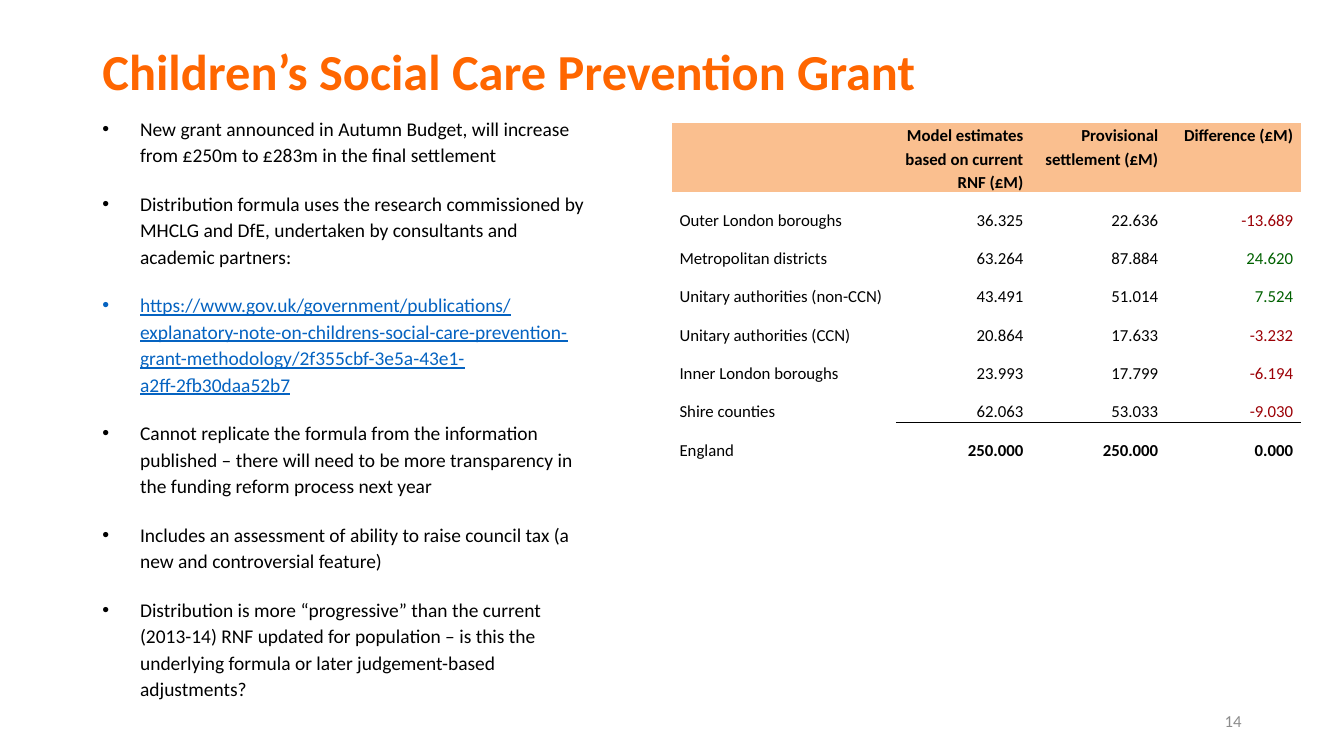
from dataclasses import dataclass

import pptx
import pptx.dml.color
import pptx.enum.text
import pptx.oxml
import pptx.oxml.ns
import pptx.util
from lxml import etree

TITLE = "Children’s Social Care Prevention Grant"
LINK = (
    "https://www.gov.uk/government/publications/"
    "explanatory-note-on-childrens-social-care-prevention-grant-methodology/"
    "2f355cbf-3e5a-43e1-a2ff-2fb30daa52b7"
)
BULLETS = [
    "New grant announced in Autumn Budget, will increase from £250m to £283m in the final settlement",
    "Distribution formula uses the research commissioned by MHCLG and DfE, undertaken by consultants "
    "and academic partners:",
    LINK,
    "Cannot replicate the formula from the information published – there will need to be more "
    "transparency in the funding reform process next year",
    "Includes an assessment of ability to raise council tax (a new and controversial feature)",
    "Distribution is more “progressive” than the current (2013-14) RNF updated for population – is this "
    "the underlying formula or later judgement-based adjustments?",
]
HEADINGS = [
    "",
    "Model estimates based on current RNF (£M)",
    "Provisional settlement (£M)",
    "Difference (£M)",
]
AUTHORITIES = [
    ("Outer London boroughs", 36.325, 22.636, -13.689),
    ("Metropolitan districts", 63.264, 87.884, 24.620),
    ("Unitary authorities (non-CCN)", 43.491, 51.014, 7.524),
    ("Unitary authorities (CCN)", 20.864, 17.633, -3.232),
    ("Inner London boroughs", 23.993, 17.799, -6.194),
    ("Shire counties", 62.063, 53.033, -9.030),
]
TOTAL = ("England", 250.0, 250.0, 0.0)
SLIDE_NUMBER = "14"

# Left, top, width, height in points
SLIDE_SIZE = (960, 540)
TITLE_BOX = (66, 29.5, 863, 47.5)
BODY_BOX = (66, 77.8, 365, 432.7)
NUMBER_BOX = (678, 500.5, 216, 29)
TABLE_LEFT, TABLE_TOP = 480, 87.8
COLUMN_WIDTHS = (160, 96.4, 96.4, 96.4)
HEADER_HEIGHT, ROW_HEIGHT = 49.2, 27.4
CELL_MARGIN = 5.4
BULLET_INDENT = 27

NO_TABLE_STYLE = "{2D5ABB26-0587-4C30-8999-92F81FD0307C}"
Align = pptx.enum.text.PP_ALIGN
Anchor = pptx.enum.text.MSO_ANCHOR
Pt = pptx.util.Pt


@dataclass(frozen=True)
class Theme:
    font: str = "Calibri"
    title_size: float = 36
    body_size: float = 13.9
    small_size: float = 12
    title: str = "FF6600"
    text: str = "000000"
    link: str = "0563C1"
    muted: str = "8C8C8C"
    header: str = "FABF8F"
    gain: str = "006100"
    loss: str = "9C0006"


THEME = Theme()


def rgb(value):
    return pptx.dml.color.RGBColor.from_string(value)


def format_paragraph(paragraph, size, color, bold=False, align=Align.LEFT, spacing=1.0):
    paragraph.alignment = align
    paragraph.line_spacing = spacing
    for run in paragraph.runs:
        run.font.name = THEME.font
        run.font.size = Pt(size)
        run.font.bold = bold
        run.font.color.rgb = rgb(color)


def place(shape, box):
    shape.left, shape.top, shape.width, shape.height = map(Pt, box)


def add_title(slide):
    title = slide.shapes.title
    place(title, TITLE_BOX)
    frame = title.text_frame
    frame.text = TITLE
    frame.auto_size = pptx.enum.text.MSO_AUTO_SIZE.NONE
    frame.vertical_anchor = Anchor.MIDDLE
    format_paragraph(frame.paragraphs[0], THEME.title_size, THEME.title, bold=True, spacing=0.9)


def add_bullet(paragraph):
    properties = paragraph._p.get_or_add_pPr()
    properties.set("marL", str(Pt(BULLET_INDENT)))
    properties.set("indent", str(-Pt(BULLET_INDENT)))
    font = etree.SubElement(properties, pptx.oxml.ns.qn("a:buFont"))
    font.set("typeface", "Arial")
    bullet = etree.SubElement(properties, pptx.oxml.ns.qn("a:buChar"))
    bullet.set("char", "•")


def add_body(slide):
    frame = slide.shapes.add_textbox(*map(Pt, BODY_BOX)).text_frame
    frame.word_wrap = True
    for index, text in enumerate(BULLETS):
        paragraph = frame.add_paragraph() if index else frame.paragraphs[0]
        paragraph.text = text
        add_bullet(paragraph)
        is_link = text == LINK
        format_paragraph(paragraph, THEME.body_size, THEME.link if is_link else THEME.text, spacing=1.13)
        paragraph.space_before = Pt(10 if index else 0)
        paragraph.space_after = Pt(6)
        if is_link:
            paragraph.runs[0].font.underline = True


def add_border(cell, side):
    """Draw a black line on one side of a cell: T for top, B for bottom."""
    border = pptx.oxml.parse_xml(
        f'<a:ln{side} {pptx.oxml.ns.nsdecls("a")} w="{Pt(1)}"><a:solidFill>'
        f'<a:srgbClr val="{THEME.text}"/></a:solidFill></a:ln{side}>'
    )
    cell._tc.get_or_add_tcPr().insert(0, border)


def fill_cell(cell, text, color, bold, align, anchor):
    cell.margin_left = cell.margin_right = Pt(CELL_MARGIN)
    cell.margin_top = cell.margin_bottom = 0
    cell.vertical_anchor = anchor
    cell.text = text
    format_paragraph(cell.text_frame.paragraphs[0], THEME.small_size, color, bold, align, 1.15)


def difference_color(value):
    if value == 0:
        return THEME.text
    return THEME.gain if value > 0 else THEME.loss


def add_grant_table(slide):
    rows = AUTHORITIES + [TOTAL]
    height = HEADER_HEIGHT + ROW_HEIGHT * len(rows)
    frame = slide.shapes.add_table(
        len(rows) + 1, len(HEADINGS),
        Pt(TABLE_LEFT), Pt(TABLE_TOP), Pt(sum(COLUMN_WIDTHS)), Pt(height),
    )
    table = frame.table
    table.first_row = table.horz_banding = False
    table._tbl.tblPr.find(pptx.oxml.ns.qn("a:tableStyleId")).text = NO_TABLE_STYLE
    for column, width in zip(table.columns, COLUMN_WIDTHS):
        column.width = Pt(width)
    for index, row in enumerate(table.rows):
        row.height = Pt(ROW_HEIGHT if index else HEADER_HEIGHT)

    for column, heading in enumerate(HEADINGS):
        cell = table.cell(0, column)
        fill_cell(cell, heading, THEME.text, True, Align.RIGHT, Anchor.TOP)
        cell.fill.solid()
        cell.fill.fore_color.rgb = rgb(THEME.header)

    for row, (name, *values) in enumerate(rows, 1):
        is_total = row == len(rows)
        label = table.cell(row, 0)
        fill_cell(label, name, THEME.text, False, Align.LEFT, Anchor.BOTTOM)
        label.fill.background()
        for column, value in enumerate(values, 1):
            cell = table.cell(row, column)
            color = difference_color(value) if column == len(values) else THEME.text
            fill_cell(cell, f"{value:.3f}", color, is_total, Align.RIGHT, Anchor.BOTTOM)
            cell.fill.background()
            if is_total:
                add_border(cell, "T")
                add_border(table.cell(row - 1, column), "B")


def add_slide_number(slide):
    frame = slide.shapes.add_textbox(*map(Pt, NUMBER_BOX)).text_frame
    frame.word_wrap = True
    frame.vertical_anchor = Anchor.MIDDLE
    frame.text = SLIDE_NUMBER
    format_paragraph(frame.paragraphs[0], THEME.small_size, THEME.muted, align=Align.RIGHT)


def main():
    presentation = pptx.Presentation()
    presentation.slide_width, presentation.slide_height = map(Pt, SLIDE_SIZE)
    slide = presentation.slides.add_slide(presentation.slide_layouts.get_by_name("Title Only"))
    add_title(slide)
    add_body(slide)
    add_slide_number(slide)
    add_grant_table(slide)
    presentation.save("out.pptx")


if __name__ == "__main__":
    main()
